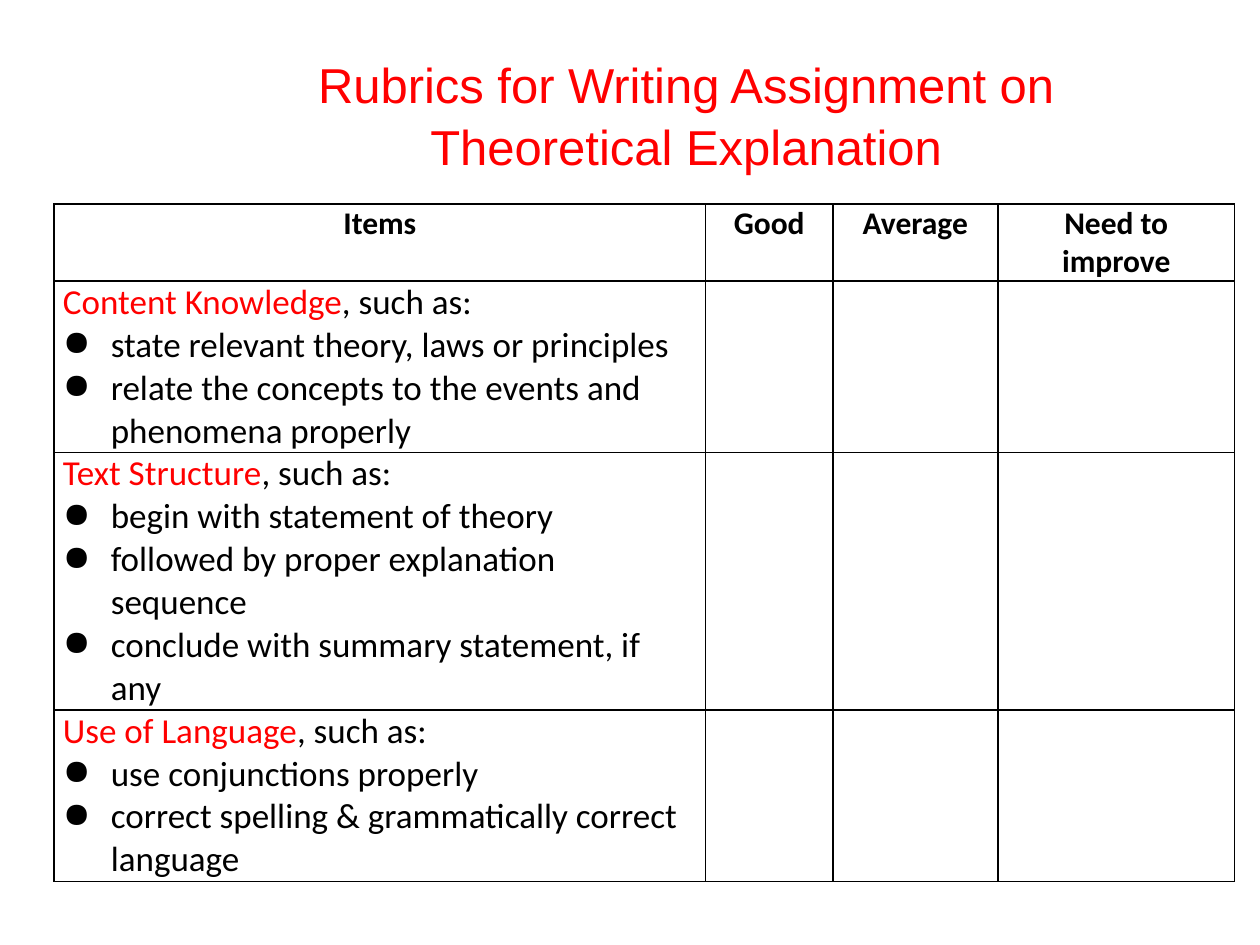
from lxml.etree import SubElement
from pptx import Presentation
from pptx.dml.color import RGBColor
from pptx.enum.text import MSO_ANCHOR, PP_ALIGN
from pptx.oxml.ns import qn
from pptx.util import Inches, Pt

COLORS = {"accent": "FF0000", "text": "000000", "paper": "FFFFFF"}
TITLE = "Rubrics for Writing Assignment on Theoretical Explanation"
HEADERS = ["Items", "Good", "Average", "Need to improve"]
CRITERIA = {
    "Content Knowledge": [
        "state relevant theory, laws or principles",
        "relate the concepts to the events and phenomena properly",
    ],
    "Text Structure": [
        "begin with statement of theory",
        "followed by proper explanation sequence",
        "conclude with summary statement, if any",
    ],
    "Use of Language": [
        "use conjunctions properly",
        "correct spelling & grammatically correct language",
    ],
}
COLUMN_WIDTHS = [5.17, 1.01, 1.31, 1.88]
ROW_HEIGHTS = [0.61, 1.36, 2.04, 1.36]


def add_span(para, text, size=20, color="text", bold=False, font="Calibri"):
    span = para.add_run()
    span.text = text
    span.font.size = Pt(size)
    span.font.name = font
    span.font.bold = bold
    span.font.color.rgb = RGBColor.from_string(COLORS[color])


def add_bullet(para, text, indent=0.38):
    properties = para._p.get_or_add_pPr()
    properties.set("marL", str(Inches(indent)))
    properties.set("indent", str(-Inches(indent)))
    SubElement(properties, qn("a:buChar"), char="●")
    add_span(para, text)


def format_cell(cell):
    cell.margin_left = cell.margin_right = Inches(0.07)
    cell.margin_top = cell.margin_bottom = 0
    cell.vertical_anchor = MSO_ANCHOR.TOP
    properties = cell._tc.get_or_add_tcPr()
    # Borders come before the fill in the cell properties
    for side in ("lnL", "lnR", "lnT", "lnB"):
        line = SubElement(properties, qn(f"a:{side}"), w=str(Pt(1)))
        fill = SubElement(line, qn("a:solidFill"))
        SubElement(fill, qn("a:srgbClr"), val=COLORS["text"])
    cell.fill.solid()
    cell.fill.fore_color.rgb = RGBColor.from_string(COLORS["paper"])


def fill_criterion(cell, name, points):
    frame = cell.text_frame
    heading = frame.paragraphs[0]
    add_span(heading, name, color="accent")
    add_span(heading, ", such as:")
    for point in points:
        add_bullet(frame.add_paragraph(), point)


def add_title(page):
    box = page.shapes.title
    box.left, box.top = Inches(1.43), Inches(0.36)
    box.width, box.height = Inches(8.03), Inches(1.04)
    frame = box.text_frame
    frame.word_wrap = True
    frame.vertical_anchor = MSO_ANCHOR.TOP
    para = frame.paragraphs[0]
    para.alignment = PP_ALIGN.CENTER
    para.line_spacing = 1.05
    add_span(para, TITLE, size=28, color="accent", font="Arial")


def add_rubric(page):
    table = page.shapes.add_table(
        len(ROW_HEIGHTS), len(COLUMN_WIDTHS), Inches(0.43), Inches(1.62),
        Inches(sum(COLUMN_WIDTHS)), Inches(sum(ROW_HEIGHTS))).table
    table.horz_banding = False
    for column, width in zip(table.columns, COLUMN_WIDTHS):
        column.width = Inches(width)
    for row, height in zip(table.rows, ROW_HEIGHTS):
        row.height = Inches(height)
    for cell in table.iter_cells():
        format_cell(cell)

    # Header row
    for column, header in enumerate(HEADERS):
        para = table.cell(0, column).text_frame.paragraphs[0]
        para.alignment = PP_ALIGN.CENTER
        add_span(para, header, size=18, bold=True)

    # One row per criterion
    for row, (name, points) in enumerate(CRITERIA.items(), start=1):
        fill_criterion(table.cell(row, 0), name, points)


def main():
    deck = Presentation()
    deck.slide_width, deck.slide_height = Inches(10), Inches(7.5)
    page = deck.slides.add_slide(deck.slide_layouts[5])
    add_title(page)
    add_rubric(page)
    deck.save("out.pptx")


if __name__ == "__main__":
    main()
